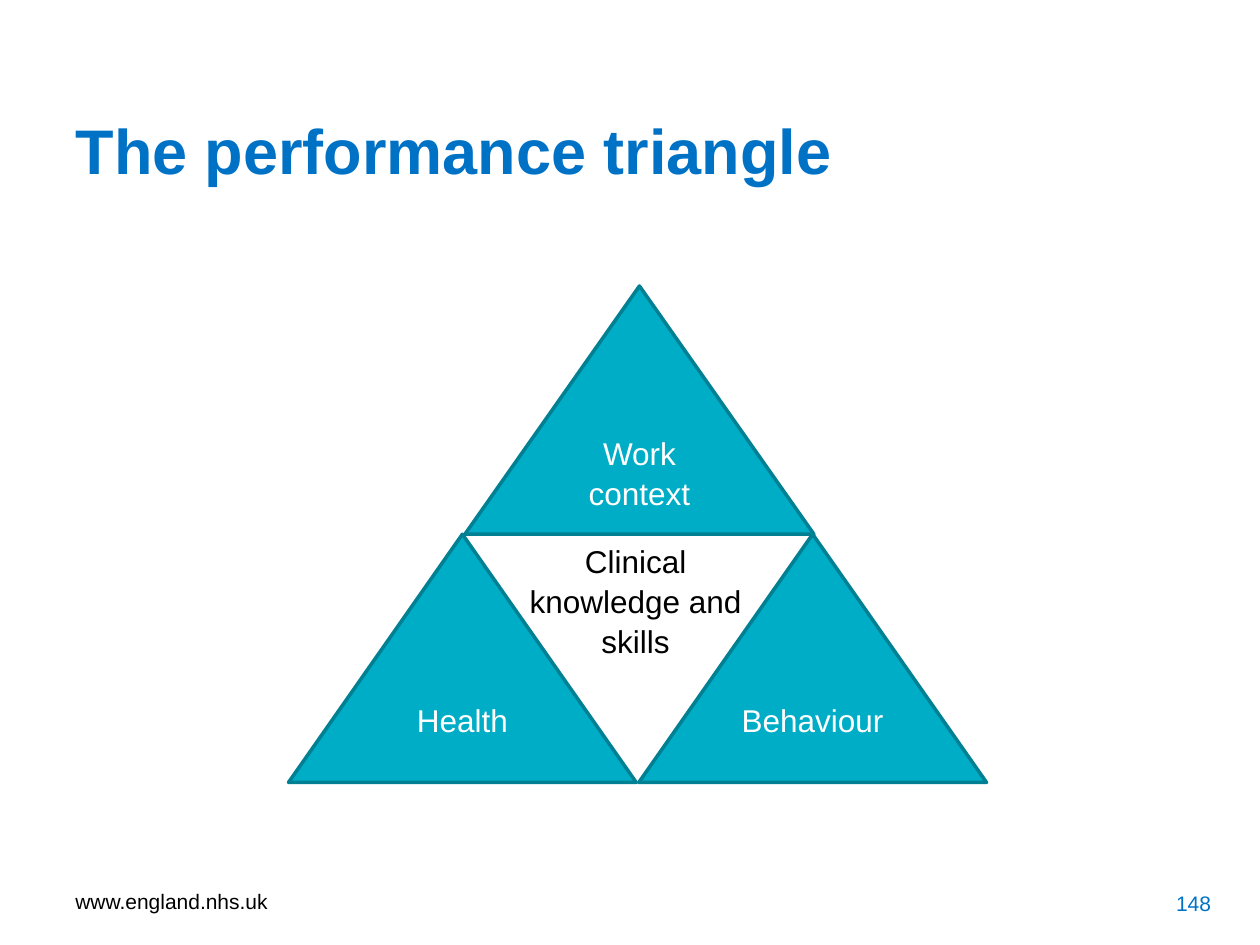
"""Build the performance triangle slide."""
from dataclasses import dataclass

from pptx import Presentation
from pptx.dml.color import RGBColor
from pptx.enum.shapes import MSO_SHAPE
from pptx.enum.text import MSO_ANCHOR, PP_ALIGN
from pptx.util import Emu, Pt

PX = 9144
FONT = "Arial"
TRIANGLE = MSO_SHAPE.ISOSCELES_TRIANGLE
TOP, MIDDLE = MSO_ANCHOR.TOP, MSO_ANCHOR.MIDDLE
LEFT, CENTER, RIGHT = PP_ALIGN.LEFT, PP_ALIGN.CENTER, PP_ALIGN.RIGHT
COLORS = {
    "blue": "0072C6",
    "teal": "00ADC6",
    "edge": "008092",
    "white": "FFFFFF",
    "black": "000000",
}


@dataclass(frozen=True)
class Box:
    x: int
    y: int
    w: int
    h: int

    def emu(self) -> tuple:
        return tuple(Emu(v * PX) for v in (self.x, self.y, self.w, self.h))


@dataclass(frozen=True)
class Label:
    text: str
    box: Box
    size: int = 18
    color: str = "black"
    align: PP_ALIGN = CENTER
    anchor: MSO_ANCHOR = MIDDLE
    bold: bool = False
    spacing: float = 1.0


TRI_W, TRI_H = 276, 197
APEX_Y = 227
BASE_Y = APEX_Y + TRI_H

TITLE = Label("The performance triangle", Box(50, 82, 805, 73), 36, "blue", LEFT, bold=True)
TRIANGLES = [
    Label("Behaviour", Box(507, BASE_Y, TRI_W, TRI_H), color="white"),
    Label("Health", Box(229, BASE_Y, TRI_W, TRI_H), color="white"),
    Label("Work context", Box(369, APEX_Y, TRI_W + 1, TRI_H), color="white", spacing=1.05),
]
TEXTS = [
    Label("www.england.nhs.uk", Box(50, 695, 233, 40), 12, align=LEFT),
    Label("Clinical knowledge and skills", Box(406, BASE_Y, 197, 101), anchor=TOP, spacing=1.05),
    Label("148", Box(738, 697, 233, 40), 12, "blue", RIGHT),
]


def rgb(name: str) -> RGBColor:
    return RGBColor.from_string(COLORS[name])


def write(sp, label: Label) -> None:
    tf = sp.text_frame
    tf.word_wrap = True
    tf.vertical_anchor = label.anchor
    p = tf.paragraphs[0]
    p.alignment = label.align
    p.line_spacing = label.spacing
    r = p.add_run()
    r.text = label.text
    r.font.name = FONT
    r.font.size = Pt(label.size)
    r.font.bold = label.bold
    r.font.color.rgb = rgb(label.color)


def add_title(s, label: Label) -> None:
    sp = s.shapes.title
    sp.left, sp.top, sp.width, sp.height = label.box.emu()
    write(sp, label)


def add_triangle(s, label: Label) -> None:
    sp = s.shapes.add_shape(TRIANGLE, *label.box.emu())
    sp.shadow.inherit = False
    sp.fill.solid()
    sp.fill.fore_color.rgb = rgb("teal")
    sp.line.color.rgb = rgb("edge")
    sp.line.width = Pt(2)
    write(sp, label)


def add_text(s, label: Label) -> None:
    write(s.shapes.add_textbox(*label.box.emu()), label)


def main() -> None:
    prs = Presentation()
    prs.slide_width, prs.slide_height = Emu(1000 * PX), Emu(750 * PX)
    s = prs.slides.add_slide(prs.slide_layouts[5])
    add_title(s, TITLE)
    for label in TRIANGLES:
        add_triangle(s, label)
    for label in TEXTS:
        add_text(s, label)
    prs.save("out.pptx")


if __name__ == "__main__":
    main()
